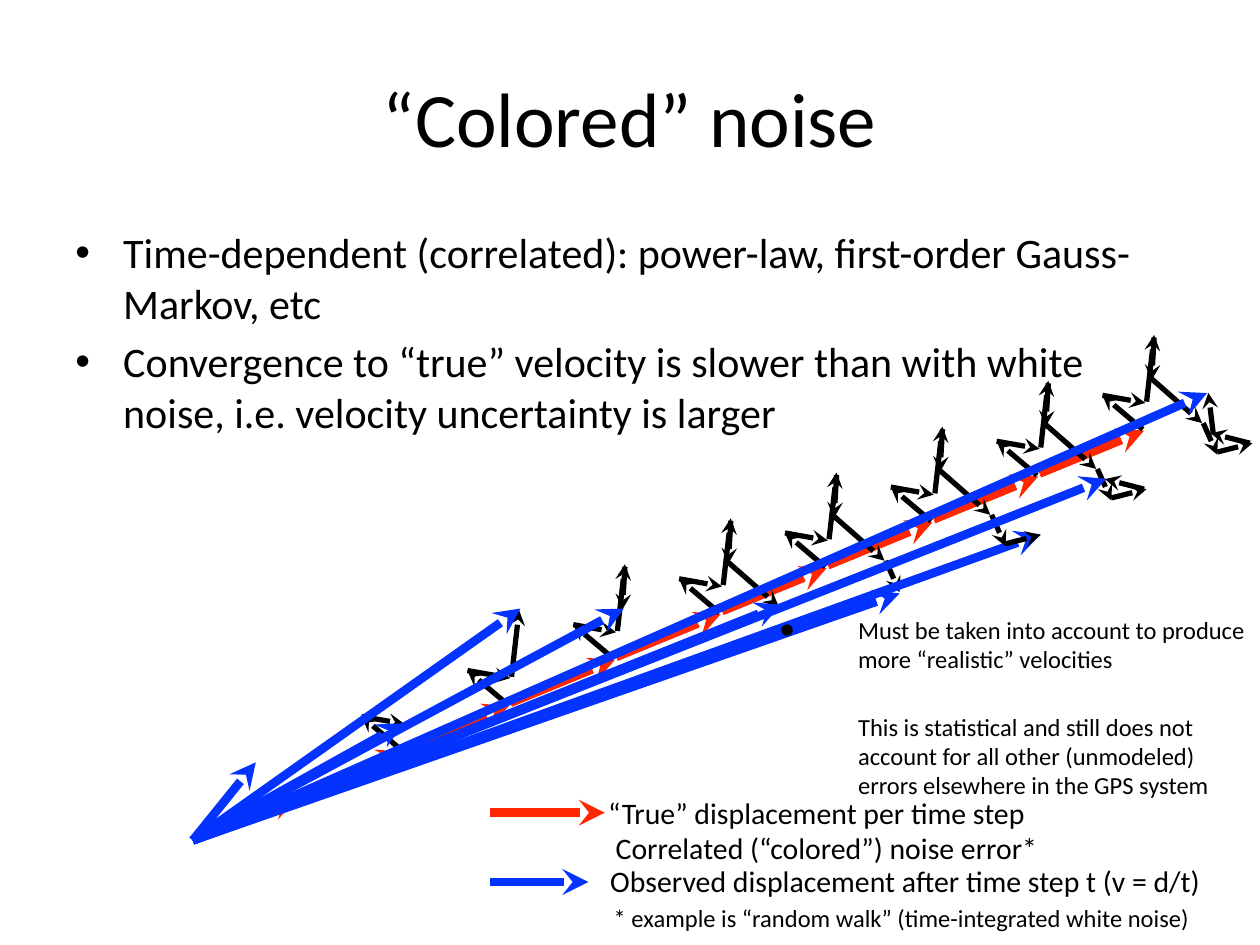
from lxml.etree import SubElement
from pptx import Presentation
from pptx.dml.color import RGBColor
from pptx.enum.shapes import MSO_CONNECTOR
from pptx.enum.text import MSO_ANCHOR, PP_ALIGN
from pptx.oxml.ns import qn
from pptx.util import Inches, Pt

BLACK, RED, BLUE = "000000", "FF2600", "0433FF"
ORIGIN = (1.53, 6.67)
FIRST_TIP = (2.36, 6.33)
STEP = (0.84, -0.364)
STEP_COUNT = 9

# Random walk: (head, tail) of each noise error, relative to its time step
NOISE_WALK = [
    ((-0.32, -0.27), (0, 0)),
    ((0.02, -0.21), (-0.32, -0.27)),
    ((0.09, -0.75), (0.03, -0.22)),
    ((0.07, -0.39), (0.09, -0.73)),
    ((0.47, -0.05), (0.06, -0.41)),
    ((0.59, 0.2), (0.48, -0.05)),
    ((0.87, 0.11), (0.59, 0.18)),
    ((0.54, 0.03), (0.85, 0.11)),
    ((0.52, -0.29), (0.56, 0.04)),
]
OBSERVED_BEHIND = [(3.2, 5.74), (4.13, 4.83), (4.95, 4.83), (8.26, 4.24)]
OBSERVED_FRONT = [(6.2, 4.8), (7.14, 4.71), (8.78, 3.8), (9.58, 3.12)]
RAISED_STEP = 7  # this walk lies between the two sets of observed arrows


def color(value):
    return RGBColor.from_string(value)


def shift(point, offset):
    return point[0] + offset[0], point[1] + offset[1]


def step_tip(step):
    """Tip of the true displacement after the given number of steps."""
    return shift(FIRST_TIP, ((step - 1) * STEP[0], (step - 1) * STEP[1]))


def add_arrow(shapes, head, tail, hue, width=5):
    ends = [Inches(value) for value in (*head, *tail)]
    arrow = shapes.add_connector(MSO_CONNECTOR.STRAIGHT, *ends)
    arrow.line.color.rgb = color(hue)
    arrow.line.width = Pt(width)
    SubElement(arrow.line._get_or_add_ln(), qn("a:headEnd"), type="stealth")
    SubElement(arrow._element.spPr, qn("a:effectLst"))


def add_text(page, box, paragraphs, size, insets=(0.1, 0.05), wrap=True,
             anchor=MSO_ANCHOR.TOP, align=PP_ALIGN.LEFT):
    frame = page.shapes.add_textbox(*map(Inches, box)).text_frame
    across, down = map(Inches, insets)
    frame_format = {"word_wrap": wrap, "vertical_anchor": anchor,
                    "margin_left": across, "margin_right": across,
                    "margin_top": down, "margin_bottom": down}
    for name, value in frame_format.items():
        setattr(frame, name, value)
    for index, text in enumerate(paragraphs):
        para = frame.add_paragraph() if index else frame.paragraphs[0]
        para.text = text
        para.alignment = align
        for span in para.runs:
            span_format = {"name": "Calibri", "size": Pt(size)}
            for name, value in span_format.items():
                setattr(span.font, name, value)
            span.font.color.rgb = color(BLACK)
    return frame


def add_bullets(frame, indent, space_before, percent=100):
    for para in frame.paragraphs:
        para.space_before = Pt(space_before)
        properties = para._p.get_or_add_pPr()
        properties.set("marL", str(Inches(indent)))
        properties.set("indent", str(-Inches(indent)))
        SubElement(properties, qn("a:buSzPct"), val=str(percent * 1000))
        SubElement(properties, qn("a:buFont"), typeface="Arial")
        SubElement(properties, qn("a:buChar"), char="•")


def add_heading(page, box):
    add_text(page, box, ["“Colored” noise"], 44,
             anchor=MSO_ANCHOR.MIDDLE, align=PP_ALIGN.CENTER)


def add_main_points(page, box):
    frame = add_text(page, box, [
        "Time-dependent (correlated): power-law, first-order Gauss-Markov, etc",
        "Convergence to “true” velocity is slower than with white noise, "
        "i.e. velocity uncertainty is larger",
    ], 24)
    add_bullets(frame, 0.38, 4.8)


def add_remark(page, box):
    frame = add_text(page, box, [
        "Must be taken into account to produce more “realistic” velocities\n\n"
        "This is statistical and still does not account for all other "
        "(unmodeled) errors elsewhere in the GPS system"
    ], 14, insets=(0, 0))
    add_bullets(frame, 0.62, 24, 171)


def add_noise_walk(page, step):
    """Draw the errors accumulated by the given time step as one group."""
    group = page.shapes.add_group_shape()
    base = shift(step_tip(step), (-0.01, -0.01))
    for head, tail in reversed(NOISE_WALK[:step]):
        add_arrow(group.shapes, shift(base, head), shift(base, tail), BLACK, 3)


def add_observed(page, tips):
    for tip in tips:
        add_arrow(page.shapes, tip, ORIGIN, BLUE)


def add_displacements(page):
    for step in range(1, STEP_COUNT + 1):
        tip = step_tip(step)
        add_arrow(page.shapes, tip, shift(tip, (-0.83, 0.34)), RED)
    add_observed(page, [(2.03, 6.05)])
    for step in range(2, STEP_COUNT + 1):
        if step != RAISED_STEP:
            add_noise_walk(page, step)
    add_observed(page, OBSERVED_BEHIND)
    add_noise_walk(page, RAISED_STEP)
    add_observed(page, OBSERVED_FRONT)


def add_legend(page, left, top):
    for length, drop, hue in [(0.91, 0.18, RED), (0.78, 0.73, BLUE)]:
        tail = (left, top + drop)
        add_arrow(page.shapes, shift(tail, (length, 0)), tail, hue)
    entries = [
        ((0.88, 0, 3.42, 0.36), "“True” displacement per time step", 17),
        ((0.93, 0.28, 3.48, 0.36), "Correlated (“colored”) noise error*", 17),
        ((0.89, 0.54, 4.81, 0.36),
         "Observed displacement after time step t (v = d/t)", 17),
        ((0.91, 0.86, 4.71, 0.31),
         "* example is “random walk” (time-integrated white noise)", 14),
    ]
    for (across, down, width, height), text, size in entries:
        add_text(page, (left + across, top + down, width, height), [text], size,
                 insets=(0.04, 0.04), wrap=False,
                 anchor=MSO_ANCHOR.MIDDLE, align=PP_ALIGN.CENTER)


def main():
    deck = Presentation()
    deck.slide_width, deck.slide_height = Inches(10), Inches(7.5)
    page = deck.slides.add_slide(deck.slide_layouts[6])
    add_heading(page, (0.5, 0.3, 9, 1.25))
    add_main_points(page, (0.5, 1.75, 9, 4.95))
    add_displacements(page)
    add_legend(page, 3.89, 6.27)
    add_remark(page, (6.19, 4.88, 3.75, 1.51))
    deck.save("out.pptx")


if __name__ == "__main__":
    main()
